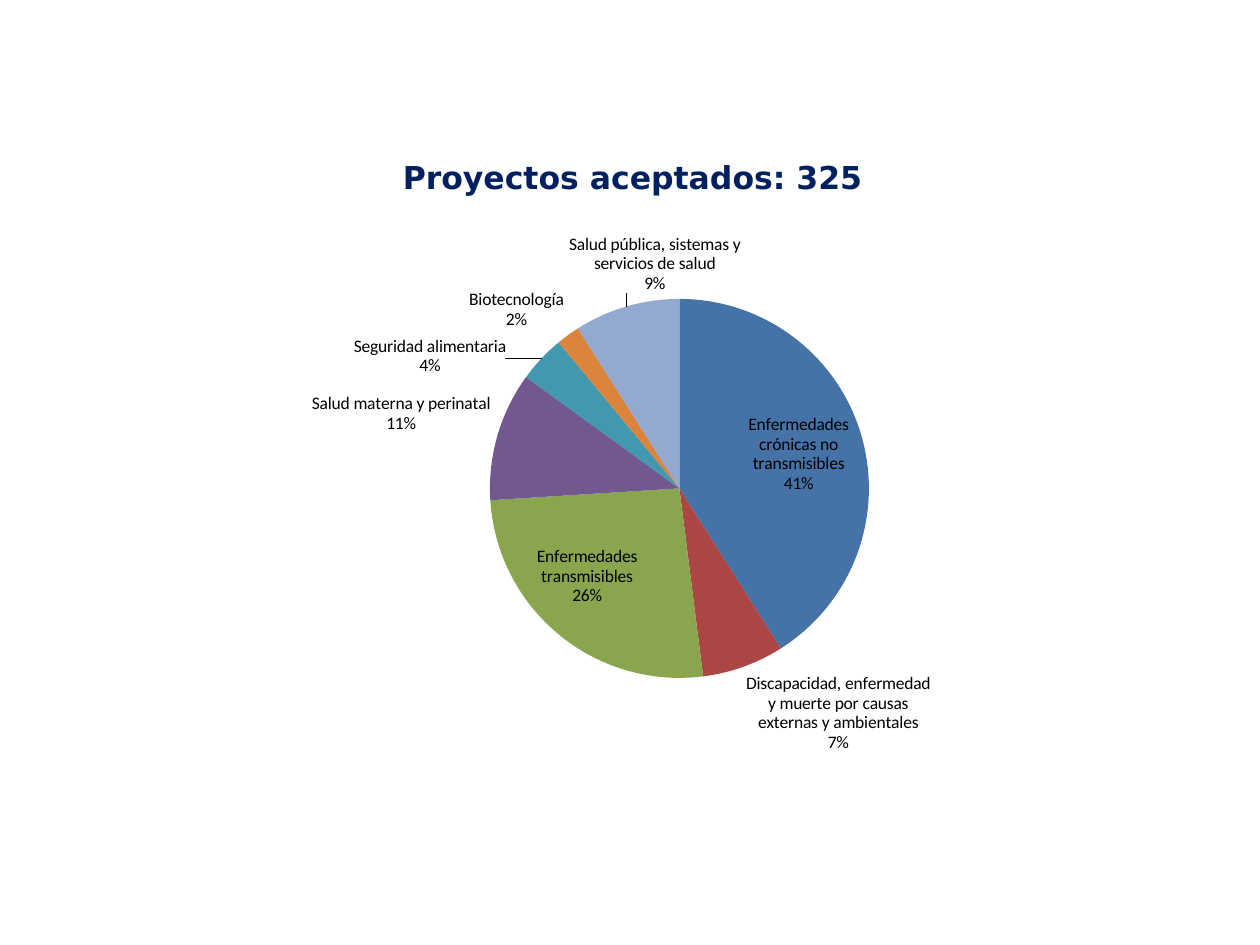
from dataclasses import dataclass

from pptx import Presentation
from pptx.chart.data import CategoryChartData
from pptx.dml.color import RGBColor
from pptx.enum.chart import XL_CHART_TYPE as ChartType, XL_LABEL_POSITION as LabelPosition
from pptx.oxml import parse_xml
from pptx.oxml.ns import nsdecls, qn
from pptx.util import Pt

EMU_PER_PX = 914400 // 126
SLIDE_SIZE = (1260, 945)
CHART_BOX = (174, 145, 934, 649)
PIE_BOX = (490, 299, 379, 379)
TITLE_CORNER = (397, 151)
TITLE = "Proyectos aceptados: 325"


@dataclass(frozen=True)
class Theme:
    title_font: str = "DejaVu Sans"
    label_font: str = "Calibri"
    title_size: int = 18
    label_size: int = 10
    title_color: str = "002060"
    label_color: str = "000000"
    background: str = "FFFFFF"


THEME = Theme()

AREAS = [
    ("Enfermedades crónicas no transmisibles", 41, "4572A7"),
    ("Discapacidad, enfermedad y muerte por causas externas y ambientales", 7, "AA4643"),
    ("Enfermedades transmisibles", 26, "89A54E"),
    ("Salud materna y perinatal", 11, "71588F"),
    ("Seguridad alimentaria", 4, "4198AF"),
    ("Biotecnología", 2, "DB843D"),
    ("Salud pública, sistemas y servicios de salud", 9, "93A9CF"),
]
LABEL_SHIFTS = {4: (-30, 22), 6: (116, -6)}


def px(length):
    return length * EMU_PER_PX


def format_font(font, *, name, size, color, bold=False):
    font.name = name
    font.size = Pt(size)
    font.bold = bold
    font.color.rgb = RGBColor.from_string(color)


def write_text(text_frame, text, **font_format):
    text_frame.text = text
    format_font(text_frame.paragraphs[0].runs[0].font, **font_format)


def make_layout(x, y, width=None, height=None, edge=False):
    chart_width, chart_height = CHART_BOX[2:]
    values = [("x", x / chart_width), ("y", y / chart_height)]
    target = modes = ""
    if edge:
        modes = '<c:xMode val="edge"/><c:yMode val="edge"/>'
    if width:
        target = '<c:layoutTarget val="inner"/>'
        values += [("w", width / chart_width), ("h", height / chart_height)]
    numbers = "".join(f'<c:{tag} val="{value:.4f}"/>' for tag, value in values)
    return parse_xml(
        f'<c:layout {nsdecls("c")}><c:manualLayout>{target}{modes}{numbers}'
        "</c:manualLayout></c:layout>"
    )


def set_layout(parent, layout, index):
    for old_layout in parent.findall(qn("c:layout")):
        parent.remove(old_layout)
    parent.insert(index, layout)


def show_name_and_percent(labels):
    for tag, shown in (("showVal", 0), ("showCatName", 1), ("showPercent", 1)):
        labels.find(qn(f"c:{tag}")).set("val", str(shown))
    separator = parse_xml(f'<c:separator {nsdecls("c")}>\n</c:separator>')
    labels.find(qn("c:showBubbleSize")).addnext(separator)


def add_pie(slide):
    data = CategoryChartData()
    data.categories = [name for name, _, _ in AREAS]
    data.add_series(TITLE, [percent for _, percent, _ in AREAS])
    chart = slide.shapes.add_chart(ChartType.PIE, *map(px, CHART_BOX), data).chart
    chart.has_legend = False
    format_font(chart.font, name=THEME.label_font, size=THEME.label_size,
                color=THEME.label_color)
    left, top, width, height = PIE_BOX
    plot_area = chart._chartSpace.chart.plotArea
    set_layout(plot_area, make_layout(left - CHART_BOX[0], top - CHART_BOX[1],
                                      width, height, edge=True), 0)
    return chart


def add_title(chart):
    chart.has_title = True
    write_text(chart.chart_title.text_frame, TITLE, name=THEME.title_font,
               size=THEME.title_size, color=THEME.title_color, bold=True)
    corner = [place - start for place, start in zip(TITLE_CORNER, CHART_BOX)]
    set_layout(chart.chart_title._element, make_layout(*corner, edge=True), 1)


def color_slices(series):
    for index, (_, _, color) in enumerate(AREAS):
        fill = series.points[index].format.fill
        fill.solid()
        fill.fore_color.rgb = RGBColor.from_string(color)


def add_labels(series):
    labels = series.data_labels
    labels.position = LabelPosition.BEST_FIT
    format_font(labels.font, name=THEME.label_font, size=THEME.label_size,
                color=THEME.label_color)
    show_name_and_percent(labels._element)
    for index, shift in LABEL_SHIFTS.items():
        label = series.points[index].data_label
        label.position = LabelPosition.BEST_FIT
        format_font(label.font, name=THEME.label_font, size=THEME.label_size,
                    color=THEME.label_color)
        element = labels._element.xpath(f'c:dLbl[c:idx/@val="{index}"]')[0]
        set_layout(element, make_layout(*shift), 1)
        show_name_and_percent(element)


def main():
    presentation = Presentation()
    presentation.slide_width, presentation.slide_height = map(px, SLIDE_SIZE)
    slide = presentation.slides.add_slide(presentation.slide_layouts[6])
    slide.background.fill.solid()
    slide.background.fill.fore_color.rgb = RGBColor.from_string(THEME.background)
    chart = add_pie(slide)
    add_title(chart)
    series = chart.plots[0].series[0]
    color_slices(series)
    add_labels(series)
    presentation.save("out.pptx")


if __name__ == "__main__":
    main()
